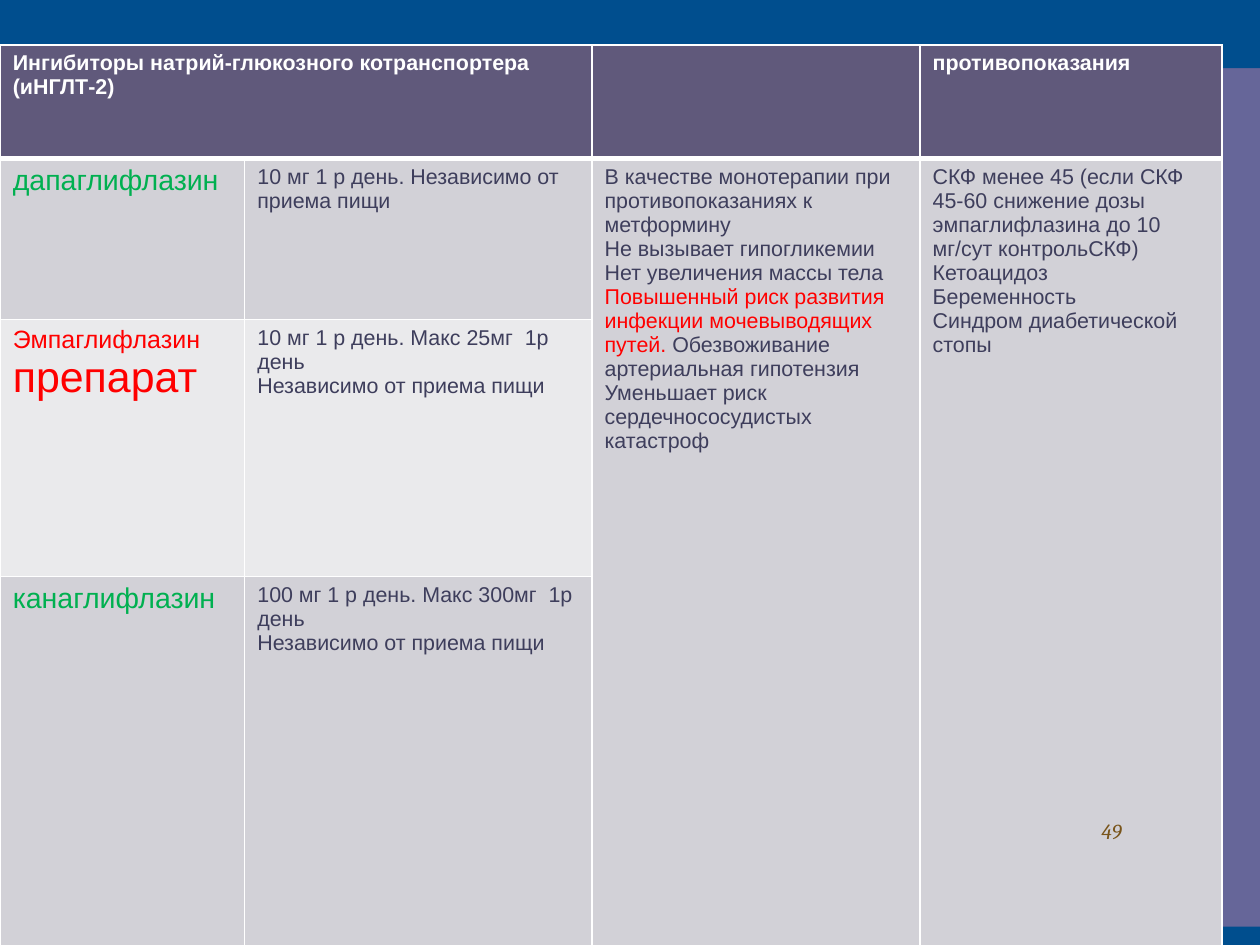
from lxml.etree import SubElement
from pptx import Presentation
from pptx.dml.color import RGBColor
from pptx.enum.shapes import MSO_SHAPE
from pptx.enum.text import PP_ALIGN
from pptx.oxml.ns import qn
from pptx.util import Cm, Pt

COLOURS = {
    "page": "666699", "band": "004E8E", "header": "60597B",
    "dark row": "D2D1D7", "light row": "EAEAEC", "white": "FFFFFF",
    "body": "3E3E5C", "green": "00B050", "red": "FF0000", "number": "79551B",
}
PAGE_WIDTH, PAGE_HEIGHT = 24.89, 18.67
TABLE_TOP = 0.89
COLUMN_WIDTHS = [4.83, 6.86, 6.48, 5.97]
ROW_HEIGHTS = [2.24, 3.18, 5.08, 7.32]
ROW_FILLS = ["header", "dark row", "light row", "dark row"]
MERGES = [((0, 0), (0, 1)), ((1, 2), (3, 2)), ((1, 3), (3, 3))]
BANDS = [(0, 1.35), (18.31, 0.36)]  # top, height

# Cell content: paragraphs of (text, size, colour) runs
CELLS = {
    (0, 0): [[("Ингибиторы натрий-глюкозного котранспортера (иНГЛТ-2)", 12, "white")]],
    (0, 3): [[("противопоказания", 12, "white")]],
    (1, 0): [[("дапаглифлазин", 16, "green")]],
    (1, 1): [[("10 мг 1 р день. Независимо от приема пищи", 12, "body")]],
    (1, 2): [
        [("В качестве монотерапии при противопоказаниях к метформину", 12, "body")],
        [("Не вызывает гипогликемии", 12, "body")],
        [("Нет увеличения массы тела", 12, "body")],
        [("Повышенный риск развития инфекции мочевыводящих путей. ", 12, "red"),
         ("Обезвоживание артериальная гипотензия", 12, "body")],
        [("Уменьшает риск сердечнососудистых катастроф", 12, "body")],
    ],
    (1, 3): [
        [("СКФ менее 45 (если СКФ 45-60 снижение дозы эмпаглифлазина "
          "до 10 мг/сут контрольСКФ)", 12, "body")],
        [("Кетоацидоз", 12, "body")],
        [("Беременность", 12, "body")],
        [("Синдром диабетической стопы", 12, "body")],
    ],
    (2, 0): [[("Эмпаглифлазин", 14, "red")], [("препарат", 24, "red")]],
    (2, 1): [[("10 мг 1 р день. Макс 25мг  1р день", 12, "body")],
             [("Независимо от приема пищи", 12, "body")]],
    (3, 0): [[("канаглифлазин", 16, "green")]],
    (3, 1): [[("100 мг 1 р день. Макс 300мг  1р день", 12, "body")],
             [("Независимо от приема пищи", 12, "body")]],
}


def paint(fill, colour):
    fill.solid()
    fill.fore_color.rgb = RGBColor.from_string(COLOURS[colour])


def add_span(para, text, size, colour, font="Arial", bold=False, italic=False):
    span = para.add_run()
    span.text = text
    span.font.name = font
    span.font.size = Pt(size)
    span.font.bold = bold
    span.font.italic = italic
    span.font.color.rgb = RGBColor.from_string(COLOURS[colour])


def add_borders(cell, widths):
    properties = cell._tc.get_or_add_tcPr()
    for side, width in widths.items():
        line = SubElement(properties, qn(f"a:ln{side}"), w=str(Pt(width)))
        solid = SubElement(line, qn("a:solidFill"))
        SubElement(solid, qn("a:srgbClr"), val=COLOURS["white"])


deck = Presentation()
deck.slide_width, deck.slide_height = Cm(PAGE_WIDTH), Cm(PAGE_HEIGHT)
page = deck.slides.add_slide(deck.slide_layouts[6])
paint(page.background.fill, "page")

# Bands along the top and bottom
for top, height in BANDS:
    band = page.shapes.add_shape(MSO_SHAPE.RECTANGLE, 0, Cm(top), Cm(PAGE_WIDTH), Cm(height))
    band.shadow.inherit = False
    paint(band.fill, "band")
    band.line.fill.background()

# Table of drugs
table = page.shapes.add_table(
    len(ROW_HEIGHTS), len(COLUMN_WIDTHS), 0, Cm(TABLE_TOP),
    Cm(sum(COLUMN_WIDTHS)), Cm(sum(ROW_HEIGHTS))).table
table.first_row = table.horz_banding = False
for column, width in zip(table.columns, COLUMN_WIDTHS):
    column.width = Cm(width)
for row, height in zip(table.rows, ROW_HEIGHTS):
    row.height = Cm(height)
for (first_row, first_column), last in MERGES:
    table.cell(first_row, first_column).merge(table.cell(*last))

for row, fill in enumerate(ROW_FILLS):
    for column in range(len(COLUMN_WIDTHS)):
        cell = table.cell(row, column)
        add_borders(cell, {"L": 1, "R": 1, "T": 3 if row == 1 else 1, "B": 3 if row == 0 else 1})
        paint(cell.fill, fill)
        for index, spans in enumerate(CELLS.get((row, column), [])):
            frame = cell.text_frame
            para = frame.add_paragraph() if index else frame.paragraphs[0]
            for text, size, colour in spans:
                add_span(para, text, size, colour, bold=row == 0)

# Page number
box = page.shapes.add_textbox(Cm(17.63), Cm(16.03), Cm(4.78), Cm(1.04))
box.text_frame.word_wrap = True
para = box.text_frame.paragraphs[0]
para.alignment = PP_ALIGN.RIGHT
add_span(para, "49", 12, "number", font="Cambria", italic=True)

deck.save("out.pptx")
